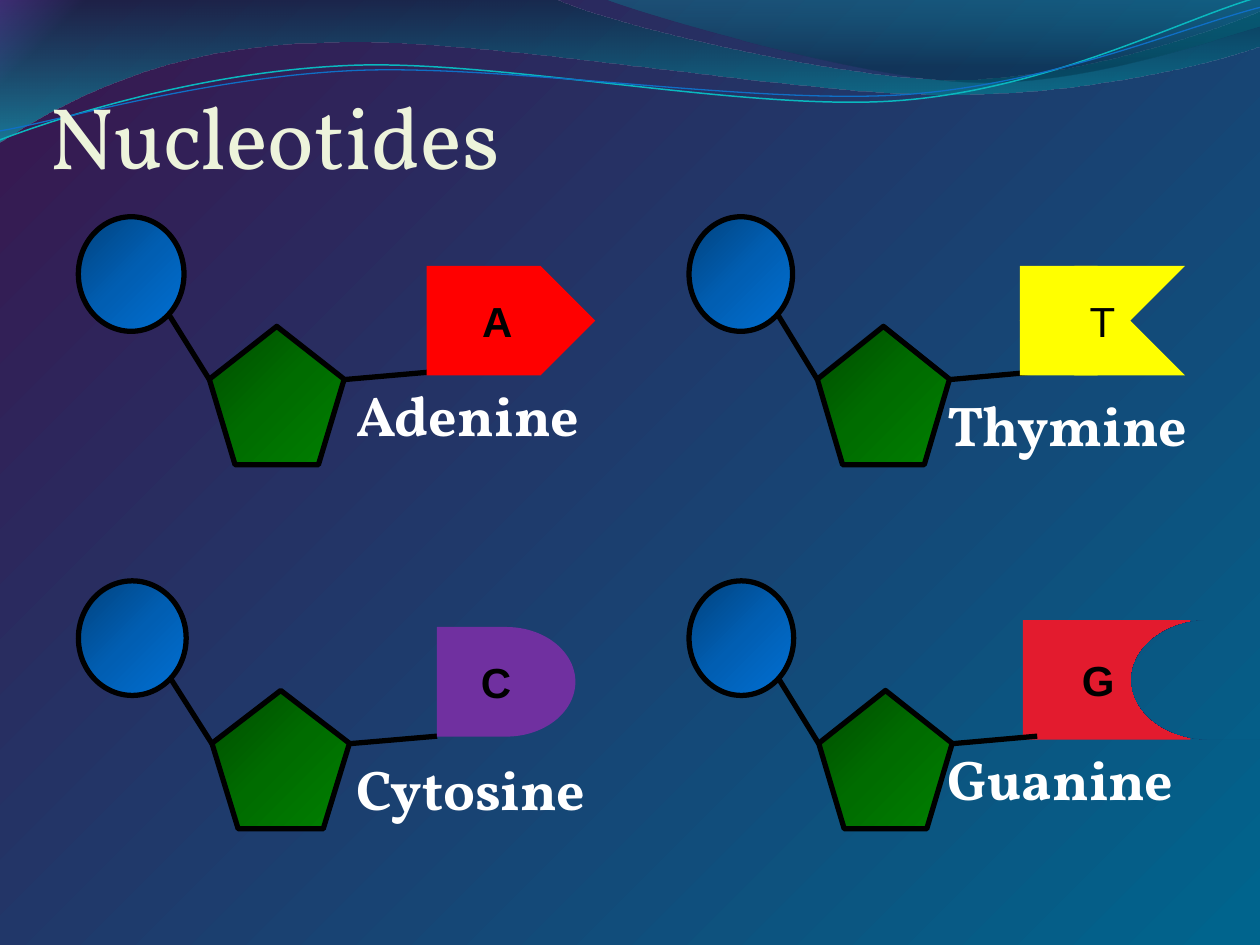
from lxml import etree
from pptx import Presentation
from pptx import util as u
from pptx.dml.color import RGBColor
from pptx.enum import shapes, text
from pptx.oxml.ns import qn

BLACK = RGBColor(0x00, 0x00, 0x00)
WHITE = RGBColor(0xFF, 0xFF, 0xFF)
CREAM = RGBColor(0xED, 0xF3, 0xDB)
RED = RGBColor(0xFF, 0x00, 0x00)
YELLOW = RGBColor(0xFF, 0xFF, 0x00)
PURPLE = RGBColor(0x70, 0x30, 0xA0)
CRIMSON = RGBColor(0xE3, 0x1B, 0x2E)
CYAN = RGBColor(0x0A, 0xB8, 0xBF)
BLUE = RGBColor(0x0F, 0x6F, 0xC6)


def stop(position, red, green, blue, opacity=100):
    return position, RGBColor(red, green, blue), opacity


# Gradients: stops and clockwise angle
BACKDROP = [stop(0, 0x70, 0x30, 0xA0), stop(4, 0x38, 0x18, 0x50),
            stop(99, 0x00, 0x64, 0x8D), stop(100, 0x00, 0x64, 0x8D)], 45
PHOSPHATE = [stop(0, 0x01, 0x42, 0x7D), stop(50, 0x01, 0x5E, 0xB2),
             stop(100, 0x01, 0x70, 0xD4)], 45
SUGAR = [stop(0, 0x00, 0x4C, 0x00), stop(50, 0x00, 0x6C, 0x00),
         stop(100, 0x00, 0x80, 0x00)], 45
WIDE_WAVE = [stop(0, 0x00, 0x2B, 0x3C, 45), stop(100, 0x00, 0xC6, 0xCF, 55)], 90
RIGHT_WAVE = [stop(0, 0x00, 0xA1, 0xA9, 30), stop(80, 0x00, 0x33, 0x47, 45)], 90

# Wave outlines in cm: pairs are straight steps, sixes are Bézier curves
WAVES = [
    ([(0, -0.03), (11.18, -0.03), (12.09, 0.43, 16.87, 1.6, 19.25, 1.6),
      (21.67, 1.6, 24.33, 0.66, 25.4, 0.23), (25.43, 0.91),
      (24.97, 1.12, 22.1, 1.93, 18.95, 1.9), (15.8, 1.9, 9.7, 0.71, 6.53, 0.86),
      (3.28, 0.89, 1.17, 2.11, -0.03, 2.87)], WIDE_WAVE),
    ([(12.17, -0.03), (12.93, 0.28, 17.32, 1.57, 19.53, 1.65),
      (21.74, 1.75, 24.41, 0.81, 25.4, 0.53), (25.4, 0)], RIGHT_WAVE),
]
WAVE_LINES = [
    ([(0, 2.82), (1.22, 2.36, 4.01, 1.45, 7.04, 1.32),
      (10.03, 1.19, 15.06, 2.26, 18.11, 2.03),
      (21.16, 1.8, 23.83, 0.38, 25.35, -0.05)], CYAN, 0.85),
    ([(0, 2.64), (1.19, 2.44, 4.17, 1.55, 7.19, 1.42),
      (10.24, 1.3, 15.16, 2.11, 18.21, 1.91),
      (21.23, 1.7, 23.9, 0.53, 25.4, 0.15)], BLUE, 0.75),
]


def paint_gradient(properties, gradient):
    """Replace the solid fill of a properties element with a gradient."""
    stops, angle = gradient
    fill = etree.Element(qn("a:gradFill"), rotWithShape="1")
    stop_list = etree.SubElement(fill, qn("a:gsLst"))
    for position, color, opacity in stops:
        mark = etree.SubElement(stop_list, qn("a:gs"), pos=str(position * 1000))
        tint = etree.SubElement(mark, qn("a:srgbClr"), val=str(color))
        if opacity < 100:
            etree.SubElement(tint, qn("a:alpha"), val=str(opacity * 1000))
    etree.SubElement(fill, qn("a:lin"), ang=str(angle * 60000), scaled="0")
    properties.replace(properties.find(qn("a:solidFill")), fill)


def write(frame, words, *, size, color, font="Vollkorn", bold=False,
          align=text.PP_ALIGN.LEFT, anchor=text.MSO_ANCHOR.TOP):
    frame.word_wrap = True
    frame.vertical_anchor = anchor
    para = frame.paragraphs[0]
    para.alignment = align
    span = para.add_run()
    span.text = words
    span.font.name = font
    span.font.size = u.Pt(size)
    span.font.bold = bold
    span.font.color.rgb = color


def style(shape, fill=None, line=None, width=3):
    """Fill with a colour, a gradient or nothing; outline only if asked."""
    shape.shadow.inherit = False
    if fill is None:
        shape.fill.background()
    else:
        shape.fill.solid()
        if isinstance(fill, RGBColor):
            shape.fill.fore_color.rgb = fill
        else:
            paint_gradient(shape.element.spPr, fill)
    if line is None:
        shape.line.fill.background()
    else:
        shape.line.color.rgb = line
        shape.line.width = u.Pt(width)


def add_preset(page, kind, left, top, width, height, fill, line=None):
    shape = page.shapes.add_shape(
        kind, u.Cm(left), u.Cm(top), u.Cm(width), u.Cm(height))
    style(shape, fill, line)
    return shape


def flip(shape):
    shape.element.spPr.find(qn("a:xfrm")).set("flipH", "1")


def add_curve(page, outline, closed, **look):
    """Lay straight steps between the anchors, then bend the curved ones."""
    start, *rest = [(u.Cm(step[-2]), u.Cm(step[-1])) for step in outline]
    builder = page.shapes.build_freeform(*start, scale=1.0)
    builder.add_line_segments(rest, close=closed)
    shape = builder.convert_to_shape()
    straights = list(shape.element.iter(qn("a:lnTo")))
    for step, straight in zip(outline[1:], straights):
        if len(step) == 6:
            bend = etree.Element(qn("a:cubicBezTo"))
            for x, y in zip(step[::2], step[1::2]):
                etree.SubElement(bend, qn("a:pt"), x=str(u.Cm(x) - shape.left),
                                 y=str(u.Cm(y) - shape.top))
            straight.getparent().replace(straight, bend)
    style(shape, **look)


def add_bond(page, x1, y1, x2, y2):
    bond = page.shapes.add_connector(
        shapes.MSO_CONNECTOR.STRAIGHT, u.Cm(x1), u.Cm(y1), u.Cm(x2), u.Cm(y2))
    bond.line.color.rgb = BLACK
    bond.line.width = u.Pt(3)
    etree.SubElement(bond.element.spPr, qn("a:effectLst"))


def add_backbone(page, left, top, stretch):
    """Phosphate, sugar and the two bonds, stretched sideways."""
    def across(offset):
        return left + offset * stretch

    kinds = shapes.MSO_SHAPE
    add_preset(page, kinds.OVAL, left, top, 2.13 * stretch, 2.31, PHOSPHATE, BLACK)
    add_preset(page, kinds.REGULAR_PENTAGON, across(2.64), top + 2.21,
               2.72 * stretch, 2.79, SUGAR, BLACK)
    add_bond(page, across(2.64), top + 3.28, across(1.83), top + 1.98)
    add_bond(page, across(5.38), top + 3.28, across(7.09), top + 3.13)


def add_base(page, kind, letter, left, top, width, height, fill, bold=True,
             align=text.PP_ALIGN.CENTER):
    base = add_preset(page, kind, left, top, width, height, fill)
    write(base.text_frame, letter, size=24, color=BLACK, font="Arial", bold=bold,
          align=align, anchor=text.MSO_ANCHOR.MIDDLE)
    return base


def add_label(page, name, left, top):
    box = page.shapes.add_textbox(u.Cm(left), u.Cm(top), u.Cm(6.55), u.Cm(1.63))
    write(box.text_frame, name, size=32, color=WHITE, bold=True)


def add_title(page, words):
    title = page.shapes.title
    title.left, title.top = u.Cm(0.99), u.Cm(0.59)
    title.width, title.height = u.Cm(22.86), u.Cm(3.18)
    frame = title.text_frame
    frame.margin_left = frame.margin_right = frame.margin_bottom = 0
    frame.auto_size = text.MSO_AUTO_SIZE.NONE
    write(frame, words, size=50, color=CREAM, anchor=text.MSO_ANCHOR.BOTTOM)
    page.shapes.element.append(title.element)  # in front of the waves


def main():
    deck = Presentation()
    deck.slide_width, deck.slide_height = u.Cm(25.4), u.Cm(19.05)
    page = deck.slides.add_slide(deck.slide_layouts[5])
    kinds = shapes.MSO_SHAPE

    # Backdrop, waves and title
    page.background.fill.solid()
    paint_gradient(next(page.element.iter(qn("p:bgPr"))), BACKDROP)
    for outline, gradient in WAVES:
        add_curve(page, outline, True, fill=gradient)
    for outline, color, width in WAVE_LINES:
        add_curve(page, outline, False, line=color, width=width)
    add_title(page, "Nucleotides")

    # Adenine
    add_backbone(page, 1.58, 4.37, 1)
    add_base(page, kinds.PENTAGON, "A", 8.6, 5.36, 3.4, 2.21, RED)
    add_label(page, "Adenine", 6.93, 7.54)

    # Thymine: a block behind a mirrored chevron
    add_backbone(page, 13.89, 4.37, 0.98)
    add_preset(page, kinds.RECTANGLE, 20.56, 5.36, 1.57, 2.21, YELLOW)
    flip(add_base(page, kinds.CHEVRON, "T", 20.56, 5.36, 3.33, 2.21, YELLOW, bold=False))
    add_label(page, "Thymine", 18.85, 7.75)

    # Guanine: the notch shows the slide background
    guanine = add_base(page, kinds.RECTANGLE, "G", 20.62, 12.5, 3.38, 2.41, CRIMSON,
                       align=text.PP_ALIGN.LEFT)
    guanine.text_frame.margin_left = u.Cm(1.19)
    add_backbone(page, 13.89, 11.71, 0.99)
    notch = add_preset(page, kinds.FLOWCHART_DELAY, 22.81, 12.5, 3.18, 2.41, BLACK)
    flip(notch)
    properties = notch.element.spPr
    properties.remove(properties.find(qn("a:solidFill")))
    notch.element.set("useBgFill", "1")
    add_label(page, "Guanine", 18.85, 14.88)

    # Cytosine
    add_backbone(page, 1.58, 11.71, 1.02)
    add_base(page, kinds.FLOWCHART_DELAY, "C", 8.81, 12.64, 2.79, 2.21, PURPLE)
    add_label(page, "Cytosine", 6.94, 15.09)

    deck.save("out.pptx")


if __name__ == "__main__":
    main()
